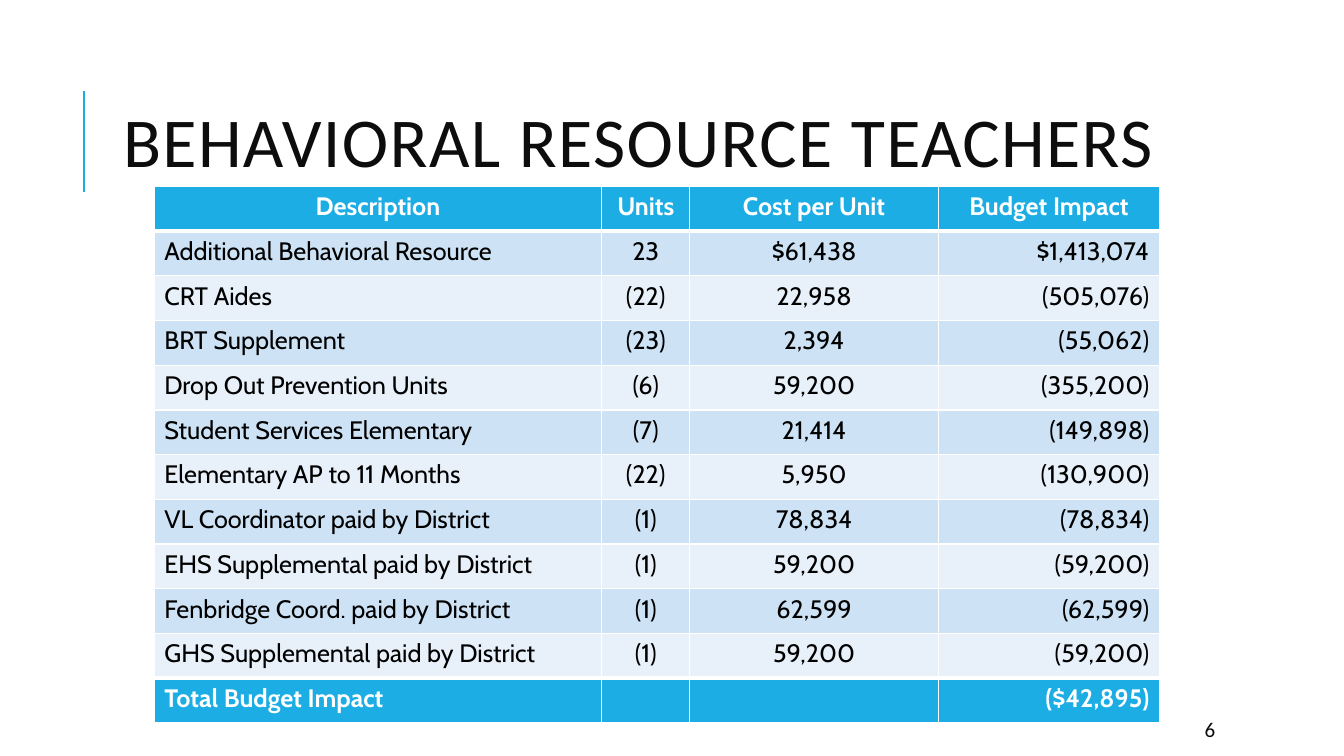
from lxml.etree import SubElement
from pptx import Presentation
from pptx.dml.color import RGBColor
from pptx.enum.shapes import MSO_CONNECTOR
from pptx.enum.text import MSO_ANCHOR, MSO_AUTO_SIZE, PP_ALIGN
from pptx.oxml.ns import qn
from pptx.util import Inches, Pt

BLUE, WHITE, BLACK, INK = "1CADE4", "FFFFFF", "000000", "0D0D0D"
BANDS = ("CDE3F5", "E8F1FA")
COLUMNS = (4.44, 0.87, 2.47, 2.19)
ALIGNS = (PP_ALIGN.LEFT, PP_ALIGN.CENTER, PP_ALIGN.CENTER, PP_ALIGN.RIGHT)
BUDGET = (
    ("Description", "Units", "Cost per Unit", "Budget Impact"),
    ("Additional Behavioral Resource", "23", "$61,438", "$1,413,074"),
    ("CRT Aides", "(22)", "22,958", "(505,076)"),
    ("BRT Supplement", "(23)", "2,394", "(55,062)"),
    ("Drop Out Prevention Units", "(6)", "59,200", "(355,200)"),
    ("Student Services Elementary", "(7)", "21,414", "(149,898)"),
    ("Elementary AP to 11 Months", "(22)", "5,950", "(130,900)"),
    ("VL Coordinator paid by District", "(1)", "78,834", "(78,834)"),
    ("EHS Supplemental paid by District", "(1)", "59,200", "(59,200)"),
    ("Fenbridge Coord. paid by District", "(1)", "62,599", "(62,599)"),
    ("GHS Supplemental paid by District", "(1)", "59,200", "(59,200)"),
    ("Total Budget Impact", "", "", "($42,895)"),
)


def rgb(value):
    return RGBColor.from_string(value)


def write(tf, text, color, align=PP_ALIGN.LEFT, **fmt):
    """Fill the first paragraph with one run and return the run."""
    p = tf.paragraphs[0]
    p.alignment = align
    r = p.add_run()
    r.text = text
    for name, value in fmt.items():
        setattr(r.font, name, value)
    r.font.color.rgb = rgb(color)
    return r


def place(sp, left, top, width, height):
    sp.left, sp.top, sp.width, sp.height = map(Inches, (left, top, width, height))


def format_frame(tf):
    fmt = {"word_wrap": True, "auto_size": MSO_AUTO_SIZE.NONE,
           "vertical_anchor": MSO_ANCHOR.MIDDLE}
    for name, value in fmt.items():
        setattr(tf, name, value)


def add_title(s, text):
    sp = s.shapes.title
    place(sp, 1.12, 0.64, 10.63, 1.64)
    tf = sp.text_frame
    format_frame(tf)
    r = write(tf, text, INK, size=Pt(50), name="Calibri")
    r.font._element.set("spc", "100")
    tf.paragraphs[0].line_spacing = 0.8


def add_accent_line(s):
    x = Inches(0.83)
    line = s.shapes.add_connector(MSO_CONNECTOR.STRAIGHT, x, Inches(1.9), x, Inches(0.9))
    line.line.color.rgb = rgb(BLUE)
    line.line.width = Pt(1.5)
    SubElement(line._element.spPr, qn("a:effectLst"))


def set_borders(cell, **widths):
    """Draw white cell borders, 1 pt unless a side is given another width."""
    tcPr = cell._tc.get_or_add_tcPr()
    for side in "LRTB":
        ln = SubElement(tcPr, qn(f"a:ln{side}"), w=str(Pt(widths.get(side, 1))))
        fill = SubElement(ln, qn("a:solidFill"))
        SubElement(fill, qn("a:srgbClr"), val=WHITE)


def add_budget_table(s, rows):
    last = len(rows) - 1
    frame = s.shapes.add_table(len(rows), len(COLUMNS), Inches(1.53), Inches(1.85),
                               Inches(sum(COLUMNS)), Inches(5.32))
    table = frame.table
    for column, width in zip(table.columns, COLUMNS):
        column.width = Inches(width)
    for i, row in enumerate(rows):
        strong = i in (0, last)
        widths = {"T": 3 if i in (1, last) else 1, "B": 3 if i in (0, last - 1) else 1}
        for j, text in enumerate(row):
            cell = table.cell(i, j)
            set_borders(cell, **widths)
            cell.fill.solid()
            cell.fill.fore_color.rgb = rgb(BLUE if strong else BANDS[(i - 1) % 2])
            write(cell.text_frame, text, WHITE if strong else BLACK,
                  ALIGNS[j] if i else PP_ALIGN.CENTER,
                  size=Pt(18), name="Cabin", bold=strong)


def add_page_number(s, number):
    sp = s.shapes.add_textbox(0, 0, 0, 0)
    place(sp, 11.85, 7.08, 1.06, 0.3)
    format_frame(sp.text_frame)
    write(sp.text_frame, number, INK, size=Pt(15), name="Calibri")


def main():
    prs = Presentation()
    prs.slide_width, prs.slide_height = Inches(13.33), Inches(7.5)
    s = prs.slides.add_slide(prs.slide_layouts[5])
    add_accent_line(s)
    add_title(s, "BEHAVIORAL RESOURCE TEACHERS")
    add_budget_table(s, BUDGET)
    add_page_number(s, "6")
    prs.save("out.pptx")


if __name__ == "__main__":
    main()
